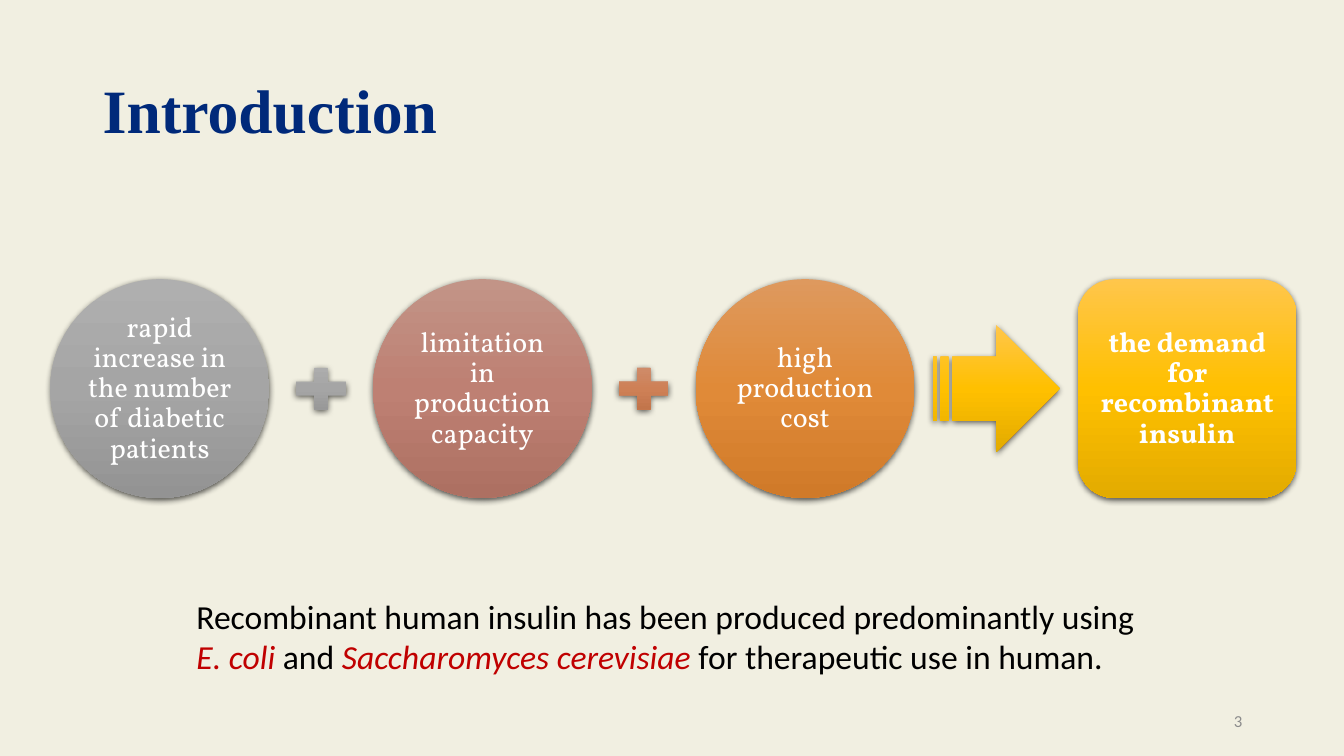
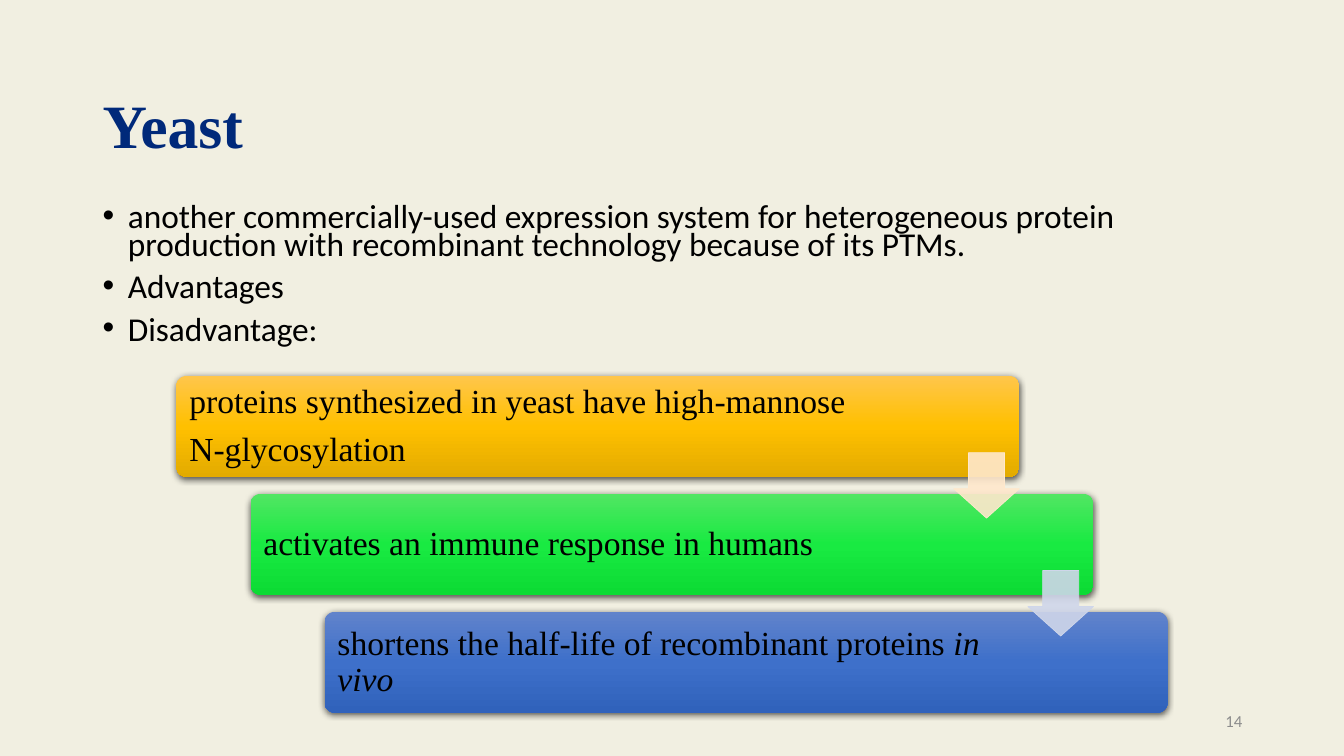
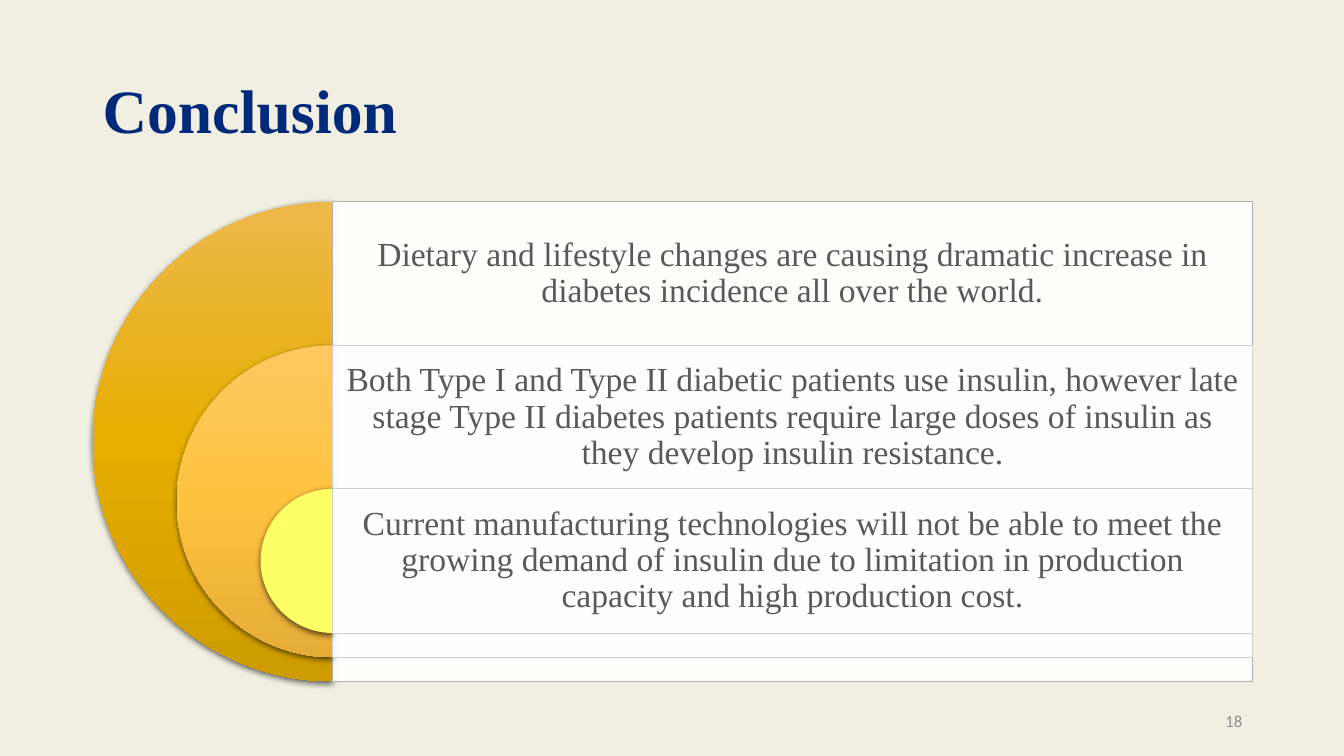
from copy import deepcopy

from pptx import Presentation
from pptx.dml.color import RGBColor
from pptx.enum.shapes import MSO_SHAPE
from pptx.enum.text import MSO_ANCHOR, PP_ALIGN
from pptx.oxml.ns import qn
from pptx.util import Inches, Pt
from lxml.etree import SubElement

BACKGROUND = RGBColor(0xF1, 0xEF, 0xE1)
NAVY = RGBColor(0x00, 0x29, 0x7A)
BLACK = RGBColor(0x00, 0x00, 0x00)
WHITE = RGBColor(0xFF, 0xFF, 0xFF)
RED = RGBColor(0xC0, 0x00, 0x00)
NUMBER_GRAY = RGBColor(0x8C, 0x8C, 0x8C)
TEXT_GRAY = RGBColor(0x59, 0x59, 0x59)
BORDER_GRAY = RGBColor(0xB0, 0xB0, 0xB0)
BORDER_LIGHT = RGBColor(0xD0, 0xD0, 0xD0)
LEMON = RGBColor(0xFF, 0xFF, 0x66)
PALE_ORANGE = RGBColor(0xFF, 0xE8, 0xCC)
PALE_BLUE = RGBColor(0xCF, 0xD6, 0xEA)


def shades(*codes):
    return [RGBColor.from_string(code) for code in codes]


GRAY_SHADES = shades("AFAFAF", "A5A5A5", "939393")
ROSE_SHADES = shades("C29487", "BE8073", "AD7062")
COPPER_SHADES = shades("CF9072", "CE8056", "BD7047")
ORANGE_SHADES = shades("DE995E", "E08A38", "D07A29")
YELLOW_SHADES = shades("FFC64B", "FFC000", "E3AB00")
GREEN_SHADES = shades("51E663", "19EA42", "0CDB34")
BLUE_SHADES = shades("6183CB", "3E70CA", "3062BB")
GOLD_SHADES = shades("EDB84B", "E7AE00", "CE9B00")
AMBER_SHADES = shades("FFC860", "FFC23F", "E5AD36")

SERIF = "Times New Roman"
SANS = "Calibri"
DISPLAY = "Vollkorn"


def set_margins(frame, left, top, right, bottom):
    frame.margin_left, frame.margin_top = Inches(left), Inches(top)
    frame.margin_right, frame.margin_bottom = Inches(right), Inches(bottom)


def write(shape, paragraphs, font, size, color, bold=False, align=PP_ALIGN.LEFT,
          anchor=MSO_ANCHOR.MIDDLE, line_spacing=None, gap=0, bullet=False):
    """Fill a shape with paragraphs, each a list of (text, style overrides) runs."""
    frame = shape.text_frame
    frame.word_wrap = True
    frame.vertical_anchor = anchor
    for index, runs in enumerate(paragraphs):
        paragraph = frame.add_paragraph() if index else frame.paragraphs[0]
        paragraph.alignment = align
        if bullet:
            properties = paragraph._p.get_or_add_pPr()
            properties.set("marL", str(Inches(0.25)))
            properties.set("indent", str(-Inches(0.25)))
            SubElement(properties, qn("a:buFont")).set("typeface", "Arial")
            SubElement(properties, qn("a:buChar")).set("char", "•")
        if line_spacing:
            paragraph.line_spacing = line_spacing
        if index and gap:
            paragraph.space_before = Pt(gap)
        for text, style in runs:
            run = paragraph.add_run()
            run.text = text
            run.font.name = font
            run.font.size = Pt(size)
            run.font.bold = bold
            run.font.italic = style.get("italic", False)
            run.font.color.rgb = style.get("color", color)


def plain(*texts):
    """One single-run paragraph for each text."""
    return [[(text, {})] for text in texts]


def add_text(slide, box, paragraphs, *args, **options):
    shape = slide.shapes.add_textbox(*map(Inches, box))
    write(shape, paragraphs, *args, **options)
    return shape


def add_flat(slide, kind, box, color, line_color):
    """A 90 % opaque shape with a thin outline."""
    shape = slide.shapes.add_shape(kind, *map(Inches, box))
    shape.shadow.inherit = False
    shape.fill.solid()
    shape.fill.fore_color.rgb = color
    code = shape._element.spPr.find(qn("a:solidFill")).find(qn("a:srgbClr"))
    SubElement(code, qn("a:alpha")).set("val", "90000")
    shape.line.color.rgb = line_color
    shape.line.width = Pt(0.5)
    return shape


def add_raised(slide, kind, box, colors):
    """A shape without outline, with a soft shadow and a vertical gradient or one colour."""
    shape = slide.shapes.add_shape(kind, *map(Inches, box))
    if len(colors) == 1:
        shape.fill.solid()
        shape.fill.fore_color.rgb = colors[0]
    else:
        shape.fill.gradient()
        shape.fill.gradient_angle = 270
        stop_list = shape._element.spPr.find(qn("a:gradFill")).find(qn("a:gsLst"))
        stop_list.append(deepcopy(stop_list[0]))
        for index, (stop, color) in enumerate(zip(shape.fill.gradient_stops, colors)):
            stop.position = index / 2
            stop.color.rgb = color
    shape.line.fill.background()
    shape.shadow.inherit = False
    effects = shape._element.spPr.find(qn("a:effectLst"))
    shadow = SubElement(effects, qn("a:outerShdw"), blurRad=str(Pt(4.5)),
                        dist=str(Pt(1.5)), dir="5400000", algn="ctr", rotWithShape="0")
    shadow_color = SubElement(shadow, qn("a:srgbClr"), val="000000")
    SubElement(shadow_color, qn("a:alpha"), val="63000")
    return shape


def add_page(presentation, title, number, title_top=0.4):
    slide = presentation.slides.add_slide(presentation.slide_layouts[6])
    add_text(slide, (0.92, title_top, 11.5, 1.45), plain(title), SERIF, 44, NAVY,
             bold=True, line_spacing=0.9)
    add_text(slide, (9.42, 6.95, 3, 0.4), plain(str(number)), SANS, 12, NUMBER_GRAY,
             align=PP_ALIGN.RIGHT)
    return slide


def add_equation(slide, left, top, size):
    """Causes joined by plus signs, then an arrow to their result."""
    gap = 0.18
    parts = [
        (MSO_SHAPE.OVAL, size, size, GRAY_SHADES,
         "rapid increase in the number of diabetic patients"),
        (MSO_SHAPE.MATH_PLUS, 0.67, 0.56, GRAY_SHADES, None),
        (MSO_SHAPE.OVAL, size, size, ROSE_SHADES, "limitation in production capacity"),
        (MSO_SHAPE.MATH_PLUS, 0.67, 0.56, COPPER_SHADES, None),
        (MSO_SHAPE.OVAL, size, size, ORANGE_SHADES, "high production cost"),
        (MSO_SHAPE.STRIPED_RIGHT_ARROW, 1.26, 1.26, YELLOW_SHADES, None),
        (MSO_SHAPE.ROUNDED_RECTANGLE, size, size, YELLOW_SHADES,
         "the demand for recombinant insulin"),
    ]
    for kind, width, height, colors, text in parts:
        box = (left, top + (size - height) / 2, width, height)
        shape = add_raised(slide, kind, box, colors)
        if text:
            set_margins(shape.text_frame, 0.03, 0.03, 0.03, 0.03)
            write(shape, plain(text), DISPLAY, 20, WHITE, align=PP_ALIGN.CENTER,
                  bold=kind == MSO_SHAPE.ROUNDED_RECTANGLE, line_spacing=0.9)
        left += width + gap


def add_staircase(slide, left, top):
    """Bars stepping down to the right, linked by arrows."""
    width, height, step_x, step_y, arrow_size = 8.36, 1, 0.735, 1.17, 0.65
    steps = [
        (YELLOW_SHADES, 1.12,
         plain("proteins synthesized in yeast have high-mannose", "N-glycosylation")),
        (GREEN_SHADES, 1.49, plain("activates an immune response in humans")),
        (BLUE_SHADES, 1.49, [[("shortens the half-life of recombinant proteins ", {}),
                              ("in vivo", {"italic": True})]]),
    ]
    for index, (colors, right_margin, paragraphs) in enumerate(steps):
        box = (left + index * step_x, top + index * step_y, width, height)
        bar = add_raised(slide, MSO_SHAPE.ROUNDED_RECTANGLE, box, colors)
        bar.adjustments[0] = 0.1
        set_margins(bar.text_frame, 0.1, 0.1, right_margin, 0.1)
        write(bar, paragraphs, SERIF, 24, BLACK, line_spacing=0.9, gap=8.4)
    for index, color in enumerate((PALE_ORANGE, PALE_BLUE)):
        box = (left + width - arrow_size + index * step_x,
               top + 0.76 + index * step_y, arrow_size, arrow_size)
        arrow = add_flat(slide, MSO_SHAPE.DOWN_ARROW, box, color, color)
        arrow.adjustments[0] = 0.55
        arrow.adjustments[1] = 0.45


def add_nested_halves(slide, left, top, width, height):
    """Half discs nested inside each other, each opening into a row of text."""
    row_height, shrink = 1.425, 1.665
    center = left + height / 2
    rows = [
        (GOLD_SHADES, BORDER_GRAY,
         "Dietary and lifestyle changes are causing dramatic increase in diabetes "
         "incidence all over the world."),
        (AMBER_SHADES, BORDER_LIGHT,
         "Both Type I and Type II diabetic patients use insulin, however late stage "
         "Type II diabetes patients require large doses of insulin as they develop "
         "insulin resistance."),
        ([LEMON], BORDER_LIGHT,
         "Current manufacturing technologies will not be able to meet the growing "
         "demand of insulin due to limitation in production capacity and high "
         "production cost."),
    ]
    for index, (colors, border, text) in enumerate(rows):
        diameter = height - index * shrink
        row_top = top + index * row_height
        half = add_raised(slide, MSO_SHAPE.PIE,
                          (center - diameter / 2, row_top, diameter, diameter), colors)
        half.adjustments[0] = 54
        half.adjustments[1] = 162
        panel = add_flat(slide, MSO_SHAPE.RECTANGLE,
                         (center, row_top, left + width - center, diameter), WHITE, border)
        set_margins(panel.text_frame, 0.1, 0.1, 0.1, diameter - row_height + 0.1)
        write(panel, plain(text), SERIF, 24, TEXT_GRAY, align=PP_ALIGN.CENTER,
              line_spacing=0.9)


def build_introduction(presentation):
    slide = add_page(presentation, "Introduction", 3)
    add_equation(slide, 0.5, 2.77, 2.17)
    species = {"color": RED, "italic": True}
    summary = [
        [("Recombinant human insulin has been produced predominantly using", {})],
        [("E. coli", species), (" and ", {}), ("Saccharomyces cerevisiae", species),
         (" for therapeutic use in human.", {})],
    ]
    add_text(slide, (1.85, 5.86, 9.64, 0.91), summary, SANS, 24, BLACK,
             align=PP_ALIGN.JUSTIFY, anchor=MSO_ANCHOR.TOP)


def build_yeast(presentation):
    slide = add_page(presentation, "Yeast", 14, title_top=0.55)
    points = plain(
        "another commercially-used expression system for heterogeneous protein "
        "production with recombinant technology because of its PTMs.",
        "Advantages", "Disadvantage:")
    add_text(slide, (0.92, 2, 11.5, 1.61), points, SANS, 23.8, BLACK,
             anchor=MSO_ANCHOR.TOP, line_spacing=0.7, gap=10, bullet=True)
    add_staircase(slide, 1.75, 3.73)


def build_conclusion(presentation):
    slide = add_page(presentation, "Conclusion", 18)
    add_nested_halves(slide, 0.92, 2, 11.5, 4.76)


def main():
    presentation = Presentation()
    presentation.slide_width = Inches(13.33)
    presentation.slide_height = Inches(7.5)
    background = presentation.slide_master.background.fill
    background.solid()
    background.fore_color.rgb = BACKGROUND
    build_introduction(presentation)
    build_yeast(presentation)
    build_conclusion(presentation)
    presentation.save("out.pptx")


if __name__ == "__main__":
    main()
